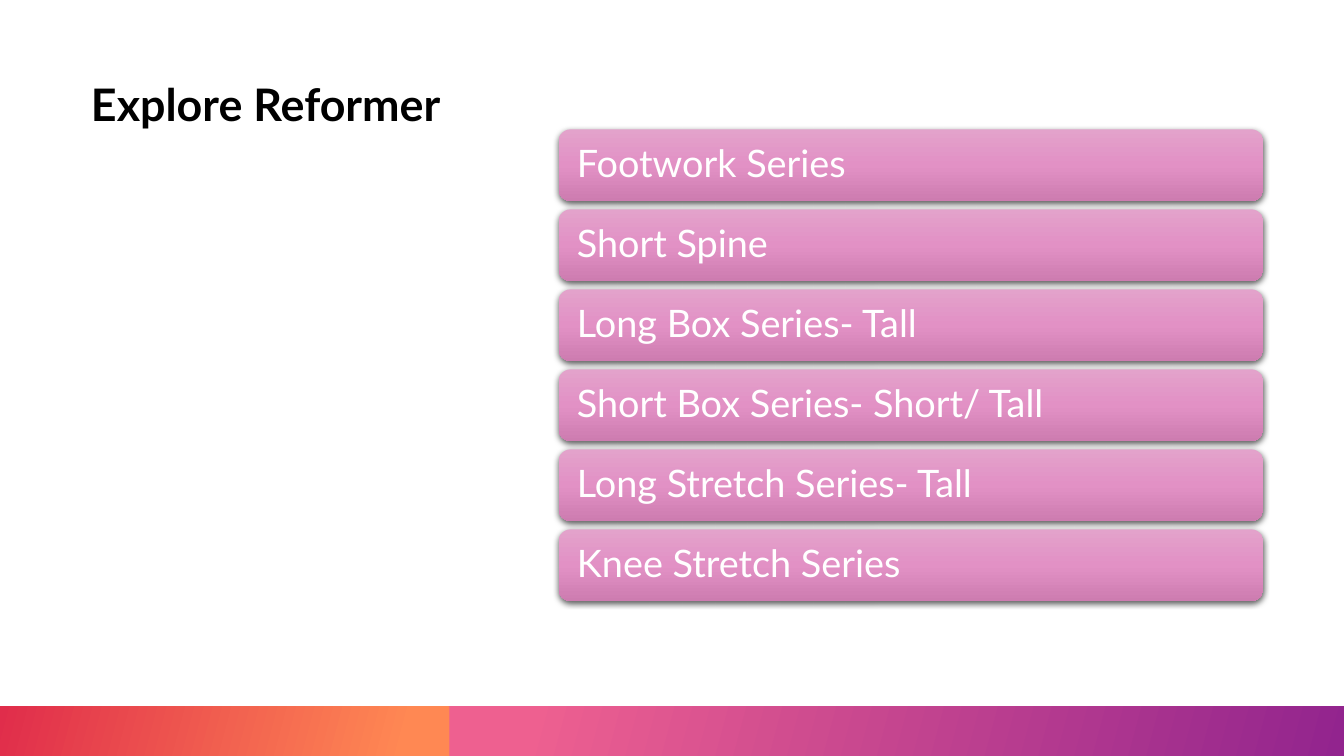
from dataclasses import dataclass

import pptx
import pptx.dml.color
import pptx.enum.shapes
import pptx.enum.text
import pptx.oxml
import pptx.oxml.ns
import pptx.util

Pt = pptx.util.Pt
SHAPES = pptx.enum.shapes.MSO_SHAPE
FONT = "Lato"
COLOURS = {
    "title": "000000",
    "card_text": "FFFFFF",
    "shadow": "000000",
    "card_top": "E3A2CB",
    "card_middle": "E291C5",
    "card_bottom": "CD7CB0",
    "red": "E02D4B",
    "orange": "FF8853",
    "pink": "EE6090",
    "purple": "92248E",
}
NAMESPACE = pptx.oxml.ns.nsdecls("a")


@dataclass(frozen=True)
class Gradient:
    stops: tuple[tuple[int, str], ...]  # percent, colour name
    angle: int  # degrees, clockwise


@dataclass(frozen=True)
class Panel:
    left: float
    top: float
    width: float
    height: float
    gradient: Gradient
    kind: SHAPES = SHAPES.RECTANGLE


CARD_GRADIENT = Gradient(((0, "card_top"), (50, "card_middle"), (100, "card_bottom")), 90)
SERIES = (
    "Footwork Series",
    "Short Spine",
    "Long Box Series- Tall",
    "Short Box Series- Short/ Tall",
    "Long Stretch Series- Tall",
    "Knee Stretch Series",
)
CARD_TOP, CARD_PITCH = 92.4, 57.15
FOOTER_TOP, FOOTER_HEIGHT = 504.6, 35.4
FOOTER_SPLIT, SLIDE_WIDTH, SLIDE_HEIGHT = 321, 960, 540
FOOTER = (
    Panel(0, FOOTER_TOP, FOOTER_SPLIT, FOOTER_HEIGHT,
          Gradient(((0, "red"), (90, "orange"), (100, "orange")), 15)),
    Panel(FOOTER_SPLIT, FOOTER_TOP, SLIDE_WIDTH - FOOTER_SPLIT, FOOTER_HEIGHT,
          Gradient(((0, "pink"), (9, "pink"), (100, "purple")), 15)),
)


def format_text(frame, text: str, size: float, colour: str, bold: bool = False) -> None:
    frame.word_wrap = True
    frame.text = text
    paragraph = frame.paragraphs[0]
    paragraph.alignment = pptx.enum.text.PP_ALIGN.LEFT
    paragraph.line_spacing = 0.9
    paragraph.font.name = FONT
    paragraph.font.size = Pt(size)
    paragraph.font.bold = bold
    paragraph.font.color.rgb = pptx.dml.color.RGBColor.from_string(COLOURS[colour])


def add_panel(slide, panel: Panel):
    shape = slide.shapes.add_shape(
        panel.kind, Pt(panel.left), Pt(panel.top), Pt(panel.width), Pt(panel.height))
    shape.shadow.inherit = False
    shape.line.fill.background()
    shape.fill.background()
    stops = "".join(
        f'<a:gs pos="{percent * 1000}"><a:srgbClr val="{COLOURS[name]}"/></a:gs>'
        for percent, name in panel.gradient.stops)
    gradient = pptx.oxml.parse_xml(
        f'<a:gradFill {NAMESPACE} rotWithShape="1"><a:gsLst>{stops}</a:gsLst>'
        f'<a:lin ang="{panel.gradient.angle * 60000}" scaled="0"/></a:gradFill>')
    properties = shape._element.spPr
    properties.replace(properties.find(pptx.oxml.ns.qn("a:noFill")), gradient)
    return shape


def add_card(slide, text: str, top: float) -> None:
    panel = Panel(399, top, 503.4, 51.2, CARD_GRADIENT, SHAPES.ROUNDED_RECTANGLE)
    shape = add_panel(slide, panel)
    effects = shape._element.spPr.find(pptx.oxml.ns.qn("a:effectLst"))
    effects.append(pptx.oxml.parse_xml(
        f'<a:outerShdw {NAMESPACE} blurRad="{Pt(4.5)}" dist="{Pt(1.5)}" dir="5400000" '
        f'algn="ctr" rotWithShape="0"><a:srgbClr val="{COLOURS["shadow"]}">'
        '<a:alpha val="63000"/></a:srgbClr></a:outerShdw>'))
    frame = shape.text_frame
    frame.margin_left = frame.margin_right = Pt(10.6)
    frame.vertical_anchor = pptx.enum.text.MSO_ANCHOR.MIDDLE
    format_text(frame, text, 27, "card_text")


def main() -> None:
    presentation = pptx.Presentation()
    presentation.slide_width = Pt(SLIDE_WIDTH)
    presentation.slide_height = Pt(SLIDE_HEIGHT)
    slide = presentation.slides.add_slide(presentation.slide_layouts.get_by_name("Title Only"))

    # Title
    title = slide.shapes.title
    title.left, title.top, title.width, title.height = Pt(57.8), Pt(55.4), Pt(279.4), Pt(391)
    title.text_frame.vertical_anchor = pptx.enum.text.MSO_ANCHOR.TOP
    format_text(title.text_frame, "Explore Reformer", 32, "title", bold=True)

    # Footer band
    for panel in FOOTER:
        add_panel(slide, panel)

    # Exercise cards
    for index, text in enumerate(SERIES):
        add_card(slide, text, CARD_TOP + index * CARD_PITCH)

    presentation.save("out.pptx")


if __name__ == "__main__":
    main()
